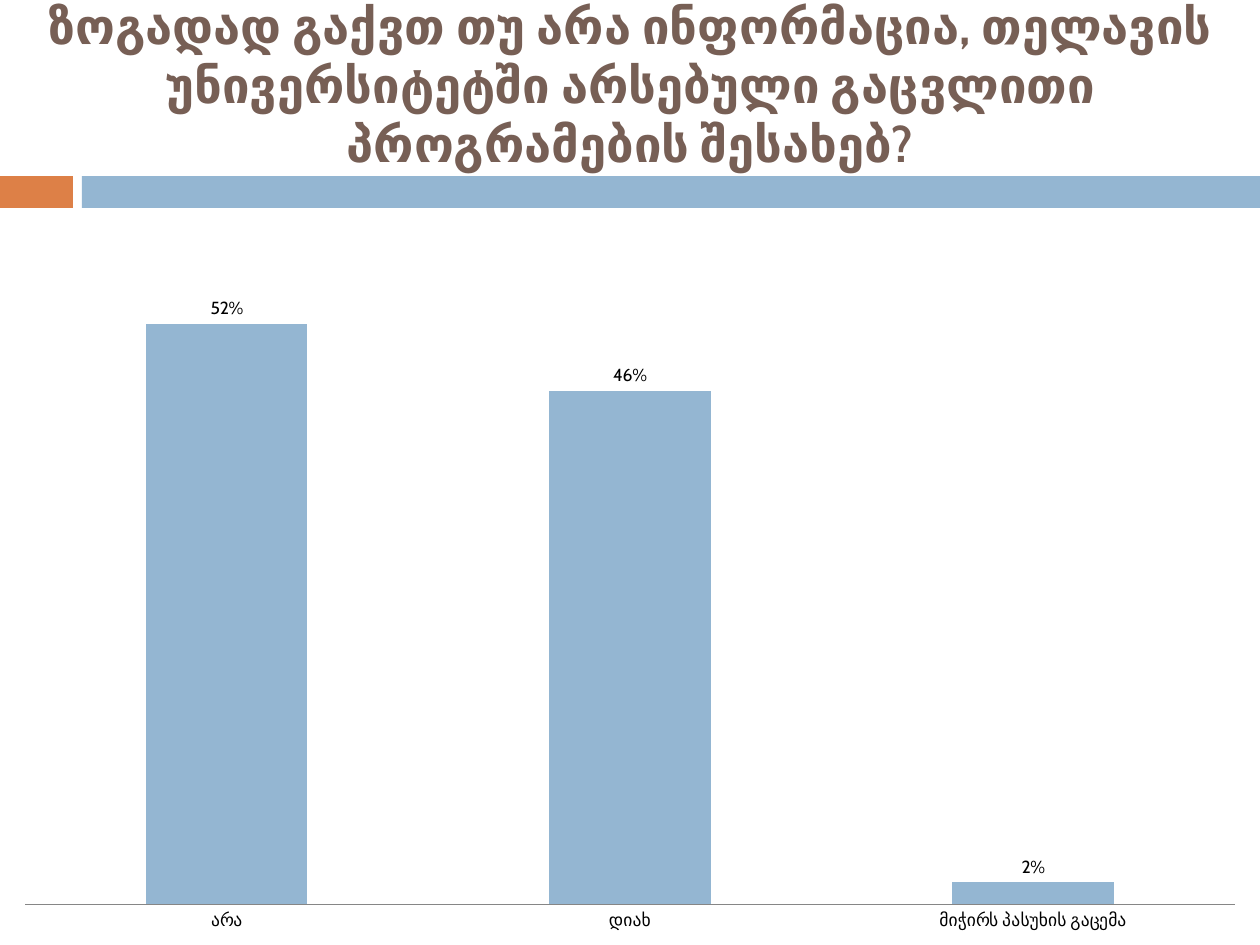
from pptx import Presentation
from pptx.chart.data import CategoryChartData
from pptx.dml.color import RGBColor
from pptx.enum.chart import XL_CHART_TYPE, XL_LABEL_POSITION, XL_TICK_MARK
from pptx.enum.shapes import MSO_SHAPE
from pptx.enum.text import MSO_ANCHOR, MSO_AUTO_SIZE, PP_ALIGN
from pptx.util import Pt

PX = 914400 // 126
FONT = "Cabin"
BLUE, ORANGE, BROWN = "94B6D2", "DD8047", "775F55"
RECT = MSO_SHAPE.RECTANGLE
COLUMN = XL_CHART_TYPE.COLUMN_CLUSTERED
OUTSIDE = XL_LABEL_POSITION.OUTSIDE_END
NO_TICK = XL_TICK_MARK.NONE
MIDDLE, CENTER = MSO_ANCHOR.MIDDLE, PP_ALIGN.CENTER
NO_FIT = MSO_AUTO_SIZE.NONE

TITLE = ("ზოგადად გაქვთ თუ არა ინფორმაცია, თელავის უნივერსიტეტში "
         "არსებული გაცვლითი პროგრამების შესახებ?")
ANSWERS = {"არა": 0.52, "დიახ": 0.46, "მიჭირს პასუხის გაცემა": 0.02}


def px(*nums):
    return [n * PX for n in nums]


def paint(fill, color):
    fill.solid()
    fill.fore_color.rgb = RGBColor.from_string(color)


def style(font, size, color, bold=False):
    font.name, font.size, font.bold = FONT, Pt(size), bold
    font.color.rgb = RGBColor.from_string(color)


def add_bar(slide, box, color):
    bar = slide.shapes.add_shape(RECT, *px(*box))
    bar.shadow.inherit = False
    paint(bar.fill, color)
    bar.line.fill.background()


def set_title(slide, text, box):
    title = slide.shapes.title
    title.left, title.top, title.width, title.height = px(*box)
    frame = title.text_frame
    frame.text = text
    frame.auto_size = NO_FIT
    frame.word_wrap = True
    frame.vertical_anchor = MIDDLE
    para = frame.paragraphs[0]
    para.alignment = CENTER
    style(para.font, 28, BROWN, bold=True)


def add_columns(slide, answers, box):
    data = CategoryChartData(number_format="0%")
    data.categories = list(answers)
    data.add_series("Series 1", list(answers.values()))
    chart = slide.shapes.add_chart(COLUMN, *px(*box), data).chart
    chart.has_legend = chart.has_title = False
    style(chart.font, 10, "000000")

    scale = chart.value_axis
    scale.minimum_scale, scale.maximum_scale = 0, 0.6
    scale.has_major_gridlines = False
    scale.visible = False
    axis = chart.category_axis
    axis.major_tick_mark = axis.minor_tick_mark = NO_TICK
    axis.format.line.color.rgb = RGBColor.from_string("868686")
    axis.format.line.width = Pt(0.75)

    plot = chart.plots[0]
    plot.vary_by_categories = False
    plot.gap_width, plot.overlap = 150, -25
    paint(plot.series[0].format.fill, BLUE)
    plot.has_data_labels = True
    labels = plot.data_labels
    labels.show_value = True
    labels.number_format = "0%"
    labels.number_format_is_linked = False
    labels.position = OUTSIDE
    style(labels.font, 10, "000000")


def main():
    deck = Presentation()
    deck.slide_width, deck.slide_height = px(1260, 945)
    slide = deck.slides.add_slide(deck.slide_layouts[5])
    add_bar(slide, (0, 176, 73, 32), ORANGE)
    add_bar(slide, (82, 176, 1178, 32), BLUE)
    set_title(slide, TITLE, (0, 0, 1260, 168))
    add_columns(slide, ANSWERS, (0, 220, 1260, 725))
    deck.save("out.pptx")


if __name__ == "__main__":
    main()
